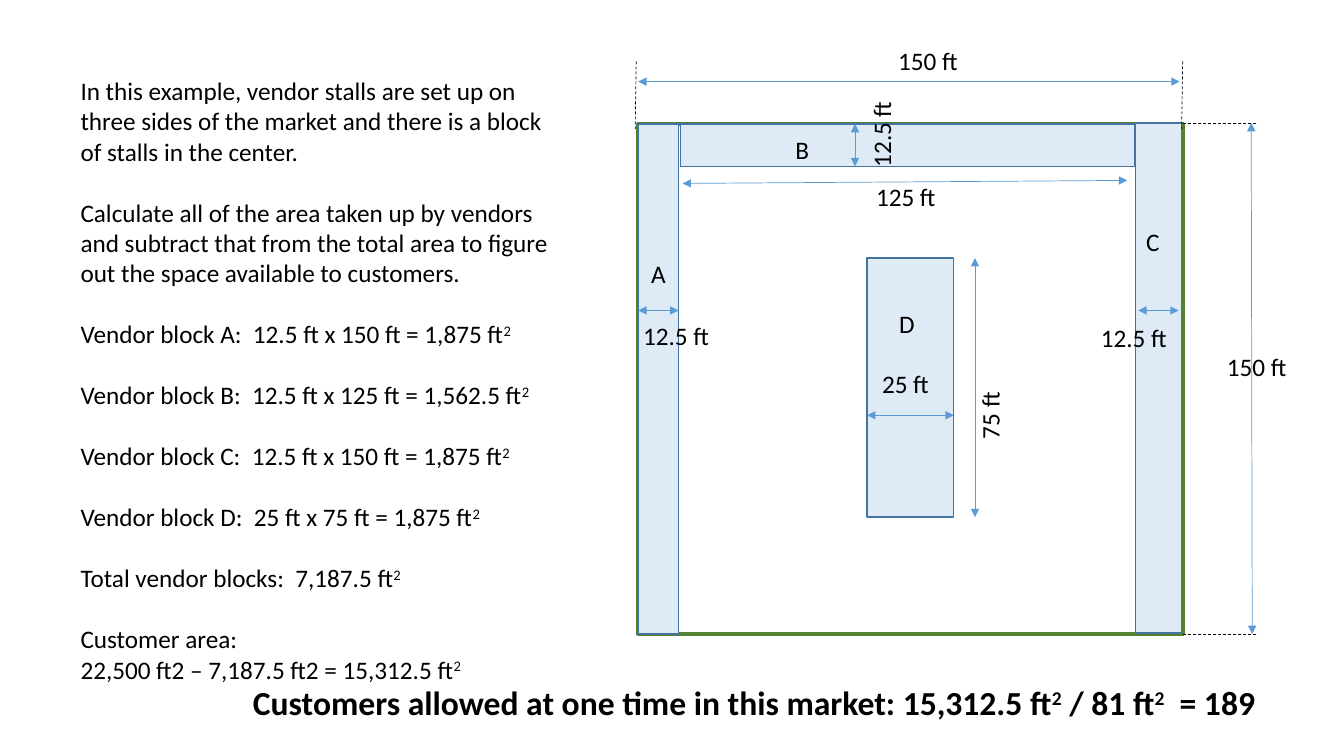
from dataclasses import dataclass
from typing import Optional

import pptx
import pptx.dml.color
import pptx.enum.dml
import pptx.enum.shapes
import pptx.enum.text
import pptx.oxml
import pptx.util
from pptx.oxml.ns import qn

RGBColor = pptx.dml.color.RGBColor
BLACK = RGBColor(0x00, 0x00, 0x00)
GREEN = RGBColor(0x54, 0x82, 0x35)
PALE = RGBColor(0xDE, 0xEB, 0xF7)
NAVY = RGBColor(0x43, 0x73, 0x9E)
BLUE = RGBColor(0x5B, 0x9B, 0xD5)
SCALE = 9144
FONT = "Calibri"
GAP = 22


@dataclass
class Block:
    left: int
    top: int
    width: int
    height: int
    edge: RGBColor = NAVY
    weight: int = 1
    fill: Optional[RGBColor] = PALE


@dataclass
class Line:
    x1: int
    y1: int
    x2: int
    y2: int


@dataclass
class Label:
    left: int
    top: int
    width: int
    height: int
    lines: list[str]
    turn: int = 0
    size: int = 18
    bold: bool = False


BLOCKS = [
    Block(633, 123, 540, 506, GREEN, 3, None),
    Block(633, 123, 40, 506),
    Block(1126, 122, 46, 506),
    Block(675, 123, 450, 42),
    Block(860, 256, 86, 257),
]
GUIDES = [
    Line(631, 61, 630, 128),
    Line(1173, 61, 1172, 128),
    Line(1246, 122, 1173, 122),
    Line(1246, 629, 1173, 629),
]
ARROWS = [
    Line(633, 81, 1170, 81),
    Line(1241, 122, 1242, 629),
    Line(633, 308, 673, 308),
    Line(1129, 308, 1169, 308),
    Line(848, 123, 848, 165),
    Line(860, 412, 946, 412),
    Line(967, 256, 967, 513),
    Line(677, 182, 1118, 179),
]
STORY = [
    "In this example, vendor stalls are set up on three sides of the market "
    "and there is a block of stalls in the center.",
    "Calculate all of the area taken up by vendors and subtract that from "
    "the total area to figure out the space available to customers.",
    "Vendor block A:  12.5 ft x 150 ft = 1,875 ft^2^",
    "Vendor block B:  12.5 ft x 125 ft = 1,562.5 ft^2^",
    "Vendor block C:  12.5 ft x 150 ft = 1,875 ft^2^",
    "Vendor block D:  25 ft x 75 ft = 1,875 ft^2^",
    "Total vendor blocks:  7,187.5 ft^2^",
    "Customer area:\n22,500 ft2 – 7,187.5 ft2 = 15,312.5 ft^2^",
]
RESULT = ("Customers allowed at one time in this market: "
          "15,312.5 ft^2^ / 81 ft^2^  = 189")
LABELS = [
    Label(70, 70, 491, 646, STORY),
    Label(881, 40, 86, 40, ["150 ft"]),
    Label(1207, 344, 81, 40, ["150 ft"]),
    Label(628, 313, 88, 40, ["12.5 ft"]),
    Label(830, 112, 88, 40, ["12.5 ft"], 270),
    Label(1082, 315, 88, 40, ["12.5 ft"]),
    Label(865, 361, 73, 40, ["25 ft"]),
    Label(951, 385, 71, 50, ["75 ft"], 270),
    Label(859, 175, 88, 40, ["125 ft"]),
    Label(636, 251, 40, 40, ["A"]),
    Label(779, 128, 47, 40, ["B"]),
    Label(1127, 220, 38, 40, ["C"]),
    Label(882, 301, 42, 40, ["D"]),
    Label(241, 672, 1040, 50, [RESULT], size=24, bold=True),
]


def px(*sizes: int) -> list[int]:
    return [size * SCALE for size in sizes]


def draw_block(slide, block: Block) -> None:
    kind = pptx.enum.shapes.MSO_SHAPE.RECTANGLE
    place = px(block.left, block.top, block.width, block.height)
    shape = slide.shapes.add_shape(kind, *place)
    shape.shadow.inherit = False
    if block.fill is None:
        shape.fill.background()
    else:
        shape.fill.solid()
        shape.fill.fore_color.rgb = block.fill
    shape.line.color.rgb = block.edge
    shape.line.width = pptx.util.Pt(block.weight)


def draw_line(slide, line: Line, arrow: bool) -> None:
    kind = pptx.enum.shapes.MSO_CONNECTOR.STRAIGHT
    ends = px(line.x1, line.y1, line.x2, line.y2)
    shape = slide.shapes.add_connector(kind, *ends)
    shape.line.width = pptx.util.Pt(0.5)
    shape.line.color.rgb = BLUE if arrow else BLACK
    props = shape._element.spPr
    if arrow:
        stroke = props.find(qn("a:ln"))
        for end in ("a:headEnd", "a:tailEnd"):
            tip = pptx.oxml.xmlchemy.OxmlElement(end)
            tip.set("type", "triangle")
            stroke.append(tip)
    else:
        shape.line.dash_style = pptx.enum.dml.MSO_LINE.DASH
    props.append(pptx.oxml.xmlchemy.OxmlElement("a:effectLst"))


def write_line(para, text: str) -> None:
    for rank, part in enumerate(text.split("^")):
        for row, piece in enumerate(part.split("\n")):
            if row:
                para.add_line_break()
            if piece:
                run = para.add_run()
                run.text = piece
                if rank % 2:
                    run.font._element.set("baseline", "30000")


def draw_label(slide, label: Label) -> None:
    place = px(label.left, label.top, label.width, label.height)
    shape = slide.shapes.add_textbox(*place)
    shape.rotation = label.turn
    frame = shape.text_frame
    frame.word_wrap = True
    frame.auto_size = pptx.enum.text.MSO_AUTO_SIZE.SHAPE_TO_FIT_TEXT
    for rank, text in enumerate(label.lines):
        para = frame.add_paragraph() if rank else frame.paragraphs[0]
        if rank:
            para.space_before = pptx.util.Pt(GAP)
        para.font.name = FONT
        para.font.size = pptx.util.Pt(label.size)
        para.font.bold = label.bold
        para.font.color.rgb = BLACK
        write_line(para, text)


def main() -> None:
    deck = pptx.Presentation()
    deck.slide_width, deck.slide_height = px(1333, 750)
    slide = deck.slides.add_slide(deck.slide_layouts[6])
    for block in BLOCKS:
        draw_block(slide, block)
    for guide in GUIDES:
        draw_line(slide, guide, False)
    for arrow in ARROWS:
        draw_line(slide, arrow, True)
    for label in LABELS:
        draw_label(slide, label)
    deck.save("out.pptx")


if __name__ == "__main__":
    main()
